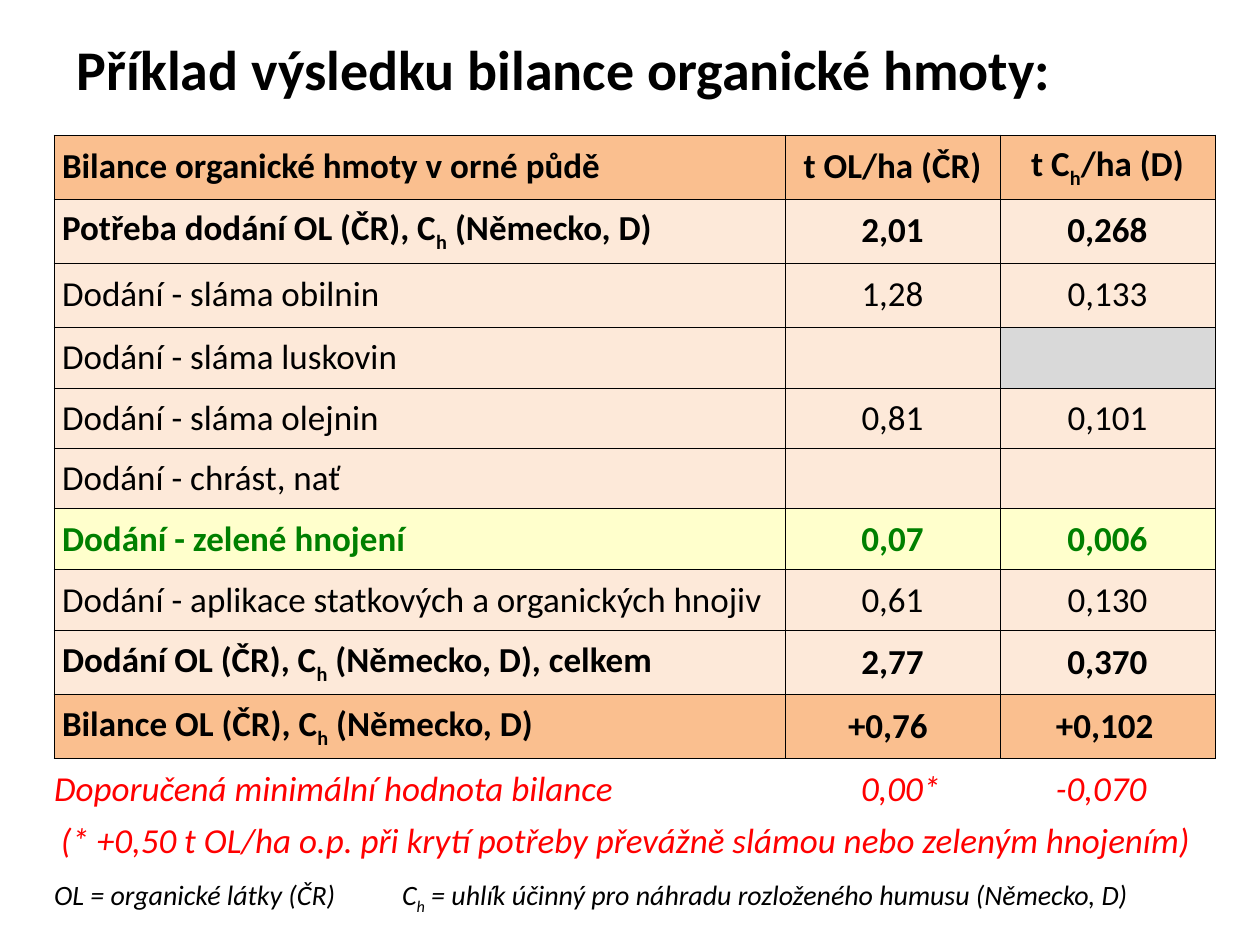
from lxml import etree
from pptx import Presentation
from pptx.dml.color import RGBColor
from pptx.enum.text import MSO_ANCHOR, PP_ALIGN
from pptx.oxml.ns import qn
from pptx.util import Emu, Pt

LEFT, CENTER = PP_ALIGN.LEFT, PP_ALIGN.CENTER
TOP, MIDDLE, BOTTOM = MSO_ANCHOR.TOP, MSO_ANCHOR.MIDDLE, MSO_ANCHOR.BOTTOM

FONT = "Calibri"
BLACK, RED, GREEN = "000000", "FF0000", "008000"
ORANGE, PEACH, YELLOW, GREY = "FABF8F", "FDE9D9", "FFFFCC", "D9D9D9"
NO_STYLE = "{2D5ABB26-0587-4C30-8999-92F81FD0307C}"
SUB = "_h"  # marks the subscript h in the wording below

COLUMNS = [731, 215, 215]
HEIGHTS = [64, 64, 64, 61, 61, 60, 61, 61, 64, 64, 61]
LABEL_INDENT = 8

# Wording, fill, text colour, bold, indents of the cells (None = values centred)
ROWS = [
    (["Bilance organické hmoty v orné půdě", "t OL/ha (ČR)", "t C_h/ha (D)"],
     ORANGE, BLACK, True, None),
    (["Potřeba dodání OL (ČR), C_h (Německo, D)", "2,01", "0,268"],
     PEACH, BLACK, True, None),
    (["Dodání - sláma obilnin", "1,28", "0,133"], PEACH, BLACK, False, None),
    (["Dodání - sláma luskovin", "", ""], PEACH, BLACK, False, None),
    (["Dodání - sláma olejnin", "0,81", "0,101"], PEACH, BLACK, False, None),
    (["Dodání - chrást, nať", "", ""], PEACH, BLACK, False, None),
    (["Dodání - zelené hnojení", "0,07", "0,006"], YELLOW, GREEN, True, None),
    (["Dodání - aplikace statkových a organických hnojiv", "0,61", "0,130"],
     PEACH, BLACK, False, None),
    (["Dodání OL (ČR), C_h (Německo, D), celkem", "2,77", "0,370"],
     PEACH, BLACK, True, None),
    (["Bilance OL (ČR), C_h (Německo, D)", "+0,76", "+0,102"],
     ORANGE, BLACK, True, [LABEL_INDENT, 63, 56]),
    (["Doporučená minimální hodnota bilance", "0,00*", "-0,070"],
     None, RED, False, [0, 76, 56]),
]

# Wording, left, top, width, height, indent, anchor, size, colour
NOTES = [
    ("(* +0,50 t OL/ha o.p. při krytí potřeby převážně slámou nebo zeleným hnojením)",
     44, 820, 1216, 38, 17, BOTTOM, 20, RED),
    ("OL = organické látky (ČR)", 54, 879, 377, 34, 0, MIDDLE, 16, BLACK),
    ("C_h = uhlík účinný pro náhradu rozloženého humusu (Německo, D)",
     402, 879, 803, 34, 0, BOTTOM, 16, BLACK),
]


def px(n):
    return Emu(round(n * 914400 / 126))


def rgb(value):
    return RGBColor.from_string(value)


def write(p, text, size, color, bold=False, italic=False, align=LEFT):
    """Fill a paragraph, lowering each marked h."""
    p.alignment = align
    for i, part in enumerate(text.split(SUB)):
        pieces = [(part, False)] if i == 0 else [("h", True), (part, False)]
        for piece, lowered in pieces:
            if not piece:
                continue
            r = p.add_run()
            r.text = piece
            font = r.font
            font.name, font.size = FONT, Pt(size)
            font.bold, font.italic = bold, italic
            font.color.rgb = rgb(color)
            if lowered:
                font._element.set("baseline", "-25000")


def add_title(s, text):
    sp = s.shapes.title
    sp.left, sp.top, sp.width, sp.height = px(77), px(42), px(1139), px(62)
    tf = sp.text_frame
    tf.margin_left = tf.margin_right = tf.margin_top = tf.margin_bottom = 0
    tf.vertical_anchor = TOP
    p = tf.paragraphs[0]
    p.line_spacing = 0.9
    write(p, text, 32, BLACK, bold=True)


def add_plain_table(s, left, top, widths, heights):
    frame = s.shapes.add_table(len(heights), len(widths), px(left), px(top),
                               px(sum(widths)), px(sum(heights)))
    table = frame.table
    table.first_row = table.horz_banding = False
    table._tbl.tblPr.find(qn("a:tableStyleId")).text = NO_STYLE
    for column, width in zip(table.columns, widths):
        column.width = px(width)
    for row, height in zip(table.rows, heights):
        row.height = px(height)
    return table


def set_borders(cell, sides):
    tc_pr = cell._tc.get_or_add_tcPr()
    for side in sides:
        ln = etree.SubElement(tc_pr, qn("a:ln" + side), w=str(Pt(0.5)))
        fill = etree.SubElement(ln, qn("a:solidFill"))
        etree.SubElement(fill, qn("a:srgbClr"), val=BLACK)


def format_cell(cell, fill, indent, sides, anchor=MIDDLE):
    cell.margin_left = px(indent)
    cell.margin_right = cell.margin_top = cell.margin_bottom = 0
    cell.vertical_anchor = anchor
    set_borders(cell, sides)
    if fill:
        cell.fill.solid()
        cell.fill.fore_color.rgb = rgb(fill)
    else:
        cell.fill.background()


def add_balance_table(s):
    table = add_plain_table(s, 54, 135, COLUMNS, HEIGHTS)
    for r, (texts, fill, color, bold, indents) in enumerate(ROWS):
        for c, text in enumerate(texts):
            cell = table.cell(r, c)
            align = CENTER if c and indents is None else LEFT
            indent = (indents or [LABEL_INDENT, 0, 0])[c]
            format_cell(cell, fill, indent, "LRTB" if fill else "T")
            write(cell.text_frame.paragraphs[0], text, 20, color, bold,
                  italic=fill is None, align=align)

    # The value that does not apply
    table.cell(3, 2).fill.fore_color.rgb = rgb(GREY)


def add_note(s, text, left, top, width, height, indent, anchor, size, color):
    cell = add_plain_table(s, left, top, [width], [height]).cell(0, 0)
    format_cell(cell, None, indent, "", anchor)
    write(cell.text_frame.paragraphs[0], text, size, color, italic=True)


def main():
    prs = Presentation()
    prs.slide_width, prs.slide_height = px(1260), px(945)
    s = prs.slides.add_slide(prs.slide_layouts[5])

    add_title(s, "Příklad výsledku bilance organické hmoty:")
    add_balance_table(s)
    for note in NOTES:
        add_note(s, *note)

    prs.save("out.pptx")


if __name__ == "__main__":
    main()
